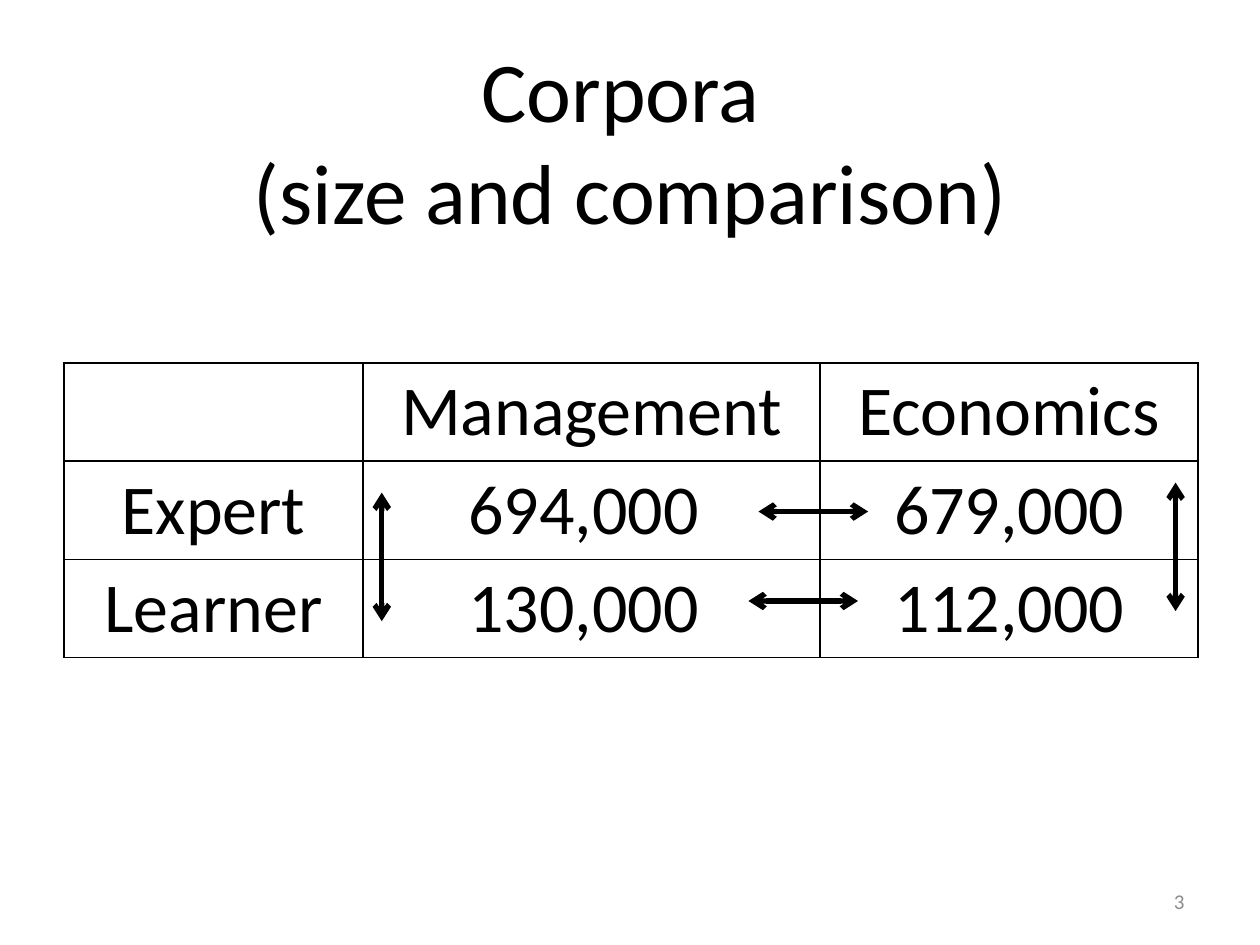
from typing import NamedTuple

from lxml.etree import SubElement
from pptx import Presentation
from pptx.dml.color import RGBColor
from pptx.enum.shapes import MSO_CONNECTOR as Connector
from pptx.enum.text import MSO_ANCHOR as Anchor, PP_ALIGN as Align
from pptx.oxml.ns import qn
from pptx.util import Inches, Pt

FONT = "Calibri"
BLACK = "000000"
GREY = "8C8C8C"
COLUMN_WIDTHS = (2.37, 3.63, 3)
ROW_HEIGHT = 0.78
ROWS = (
    ("", "Management", "Economics"),
    ("Expert", "694,000 ", "679,000"),
    ("Learner", "130,000 ", "112,000"),
)


class Arrow(NamedTuple):
    """A double-headed arrow from its start, with its extent, in inches."""

    x: float
    y: float
    width: float = 0
    height: float = 0


ARROWS = (
    Arrow(6.02, 4.06, width=0.87),
    Arrow(5.94, 4.77, width=0.87),
    Arrow(3.03, 3.91, height=1.02),
    Arrow(9.33, 3.83, height=1.02),
)


def color(value: str) -> RGBColor:
    return RGBColor.from_string(value)


def write(frame, text: str, *, size: float, ink: str = BLACK, align=Align.CENTER) -> None:
    frame.text = text
    for para in frame.paragraphs:
        para.alignment = align
        para.font.size = Pt(size)
        for span in para.runs:
            span.font.name = FONT
            span.font.size = Pt(size)
            span.font.color.rgb = color(ink)


def add_text(page, text: str, left: float, top: float, width: float, height: float, **style) -> None:
    box = page.shapes.add_textbox(Inches(left), Inches(top), Inches(width), Inches(height))
    box.text_frame.word_wrap = True
    box.text_frame.vertical_anchor = Anchor.MIDDLE
    write(box.text_frame, text, **style)


def add_borders(cell) -> None:
    properties = cell._tc.get_or_add_tcPr()
    for position, side in enumerate(("a:lnL", "a:lnR", "a:lnT", "a:lnB")):
        line = properties.makeelement(qn(side), {"w": str(Pt(1))})
        fill = SubElement(line, qn("a:solidFill"))
        SubElement(fill, qn("a:srgbClr"), val=BLACK)
        properties.insert(position, line)


def add_corpora_table(page) -> None:
    frame = page.shapes.add_table(
        len(ROWS), len(COLUMN_WIDTHS), Inches(0.51), Inches(2.88),
        Inches(sum(COLUMN_WIDTHS)), Inches(ROW_HEIGHT * len(ROWS)),
    )
    table = frame.table
    table.first_row = table.horz_banding = False
    for column, width in zip(table.columns, COLUMN_WIDTHS):
        column.width = Inches(width)
    for row, texts in zip(table.rows, ROWS):
        row.height = Inches(ROW_HEIGHT)
        for cell, text in zip(row.cells, texts):
            cell.fill.background()
            add_borders(cell)
            write(cell.text_frame, text, size=40)


def add_arrow(page, arrow: Arrow) -> None:
    connector = page.shapes.add_connector(
        Connector.STRAIGHT, Inches(arrow.x), Inches(arrow.y),
        Inches(arrow.x + arrow.width), Inches(arrow.y + arrow.height),
    )
    connector.line.color.rgb = color(BLACK)
    connector.line.width = Pt(3)
    line = connector.line._get_or_add_ln()
    for end in ("a:headEnd", "a:tailEnd"):
        SubElement(line, qn(end), type="arrow")
    SubElement(connector._element.spPr, qn("a:effectLst"))


def main() -> None:
    """Build the slide that compares corpus sizes."""
    deck = Presentation()
    deck.slide_width, deck.slide_height = Inches(10), Inches(7.5)
    page = deck.slides.add_slide(deck.slide_layouts[6])
    add_text(page, "Corpora \n(size and comparison)", 0.5, 0.52, 9, 1.18, size=48.6)
    add_corpora_table(page)
    add_text(page, "3", 7.17, 6.95, 2.33, 0.4, size=12, ink=GREY, align=Align.RIGHT)
    for arrow in ARROWS:
        add_arrow(page, arrow)
    deck.save("out.pptx")


if __name__ == "__main__":
    main()
